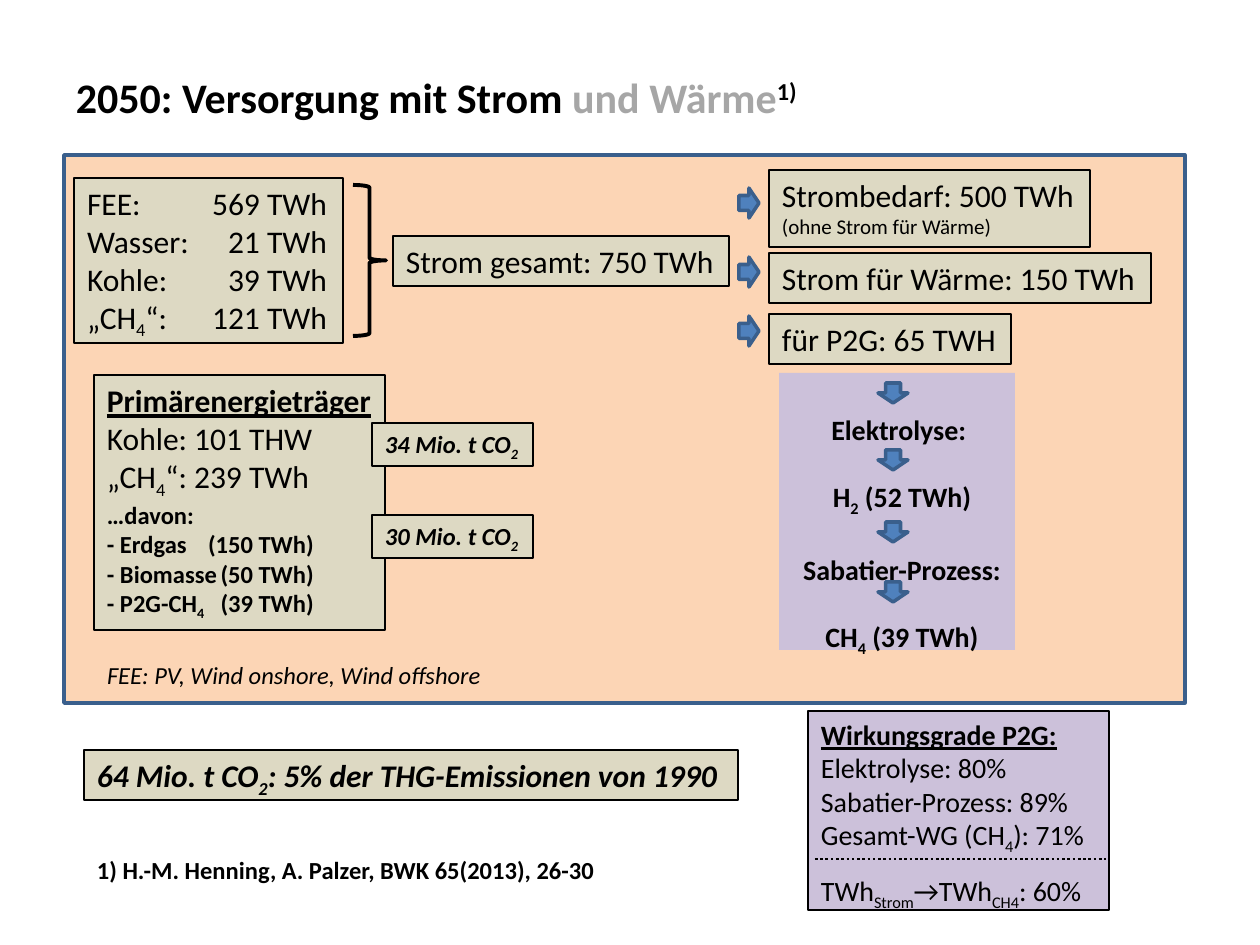
from pptx import Presentation
from pptx.dml.color import RGBColor
from pptx.enum.dml import MSO_LINE as Dash
from pptx.enum.shapes import MSO_CONNECTOR as Link, MSO_SHAPE as Kind
from pptx.enum.text import MSO_ANCHOR as Anchor, PP_ALIGN as Align
from pptx.oxml.ns import qn
from pptx.util import Pt
from lxml.etree import SubElement

SCALE = 914400 / 126
BLACK, GREY, SAND, PEACH = "000000", "A6A6A6", "DDD9C3", "FCD5B5"
LILAC, BLUE, NAVY = "CCC1DA", "4F81BD", "3A5F8C"
BOLD = {"bold": True}
HEAD = {"bold": True, "underline": True}
SLANT = {"bold": True, "italic": True}


def emu(px):
    return round(px * SCALE)


def rgb(code):
    return RGBColor.from_string(code)


class Deck:
    font = "Calibri"
    pad = 13

    def __init__(self, wide, high):
        self.prs = Presentation()
        self.prs.slide_width, self.prs.slide_height = emu(wide), emu(high)
        self.slide = self.prs.slides.add_slide(self.prs.slide_layouts[6])
        self.items = self.slide.shapes

    def shape(self, kind, box, fill=None, line=None, width=0.75):
        item = self.items.add_shape(kind, *map(emu, box))
        item.shadow.inherit = False
        if fill:
            item.fill.solid()
            item.fill.fore_color.rgb = rgb(fill)
        else:
            item.fill.background()
        if line:
            item.line.color.rgb = rgb(line)
            item.line.width = Pt(width)
        else:
            item.line.fill.background()
        return item

    def piece(self, par, text, size, color=BLACK, base=0, **form):
        """Add one run; base is its baseline shift in percent."""
        run = par.add_run()
        run.text = text
        for name, value in {"name": self.font, "size": Pt(size), **form}.items():
            setattr(run.font, name, value)
        run.font.color.rgb = rgb(color)
        if base:
            run._r.get_or_add_rPr().set("baseline", str(base * 1000))

    def put(self, item, lines, size, tab=0, align=Align.LEFT, **form):
        """Fill item with lines; a line is text or (text, format), with _subscripts_."""
        frame = item.text_frame
        side = 0 if align == Align.CENTER else self.pad
        look = {"word_wrap": True, "vertical_anchor": Anchor.TOP,
                "margin_left": emu(side), "margin_right": 0}
        for name, value in look.items():
            setattr(frame, name, value)
        for n, line in enumerate(lines):
            text, extra = (line, {}) if isinstance(line, str) else line
            style = {"size": size, **form, **extra}
            gap = style.pop("gap", 0)
            par = frame.add_paragraph() if n else frame.paragraphs[0]
            if tab and "\t" in text:
                stops = SubElement(par._p.get_or_add_pPr(), qn("a:tabLst"))
                SubElement(stops, qn("a:tab"), pos=str(emu(tab)), algn="r")
            par.alignment = align
            if gap:
                par.space_before = Pt(gap)
            for k, part in enumerate(text.split("_")):
                if part:
                    self.piece(par, part, base=-25 if k % 2 else 0, **style)

    def card(self, box, lines, size=18, fill=SAND, **form):
        self.put(self.shape(Kind.RECTANGLE, box, fill, BLACK), lines, size, **form)

    def label(self, box, lines, size, **form):
        item = self.items.add_textbox(*map(emu, box))
        self.put(item, lines, size, **form)
        return item

    def arrow(self, x, y, turn=0):
        item = self.shape(Kind.RIGHT_ARROW, (x, y, 20, 30), BLUE, NAVY, 2)
        item.rotation = turn

    def dots(self, left, right, y):
        line = self.items.add_connector(Link.STRAIGHT, *map(emu, (left, y, right, y)))
        line.line.color.rgb = rgb(BLACK)
        line.line.width = Pt(1.5)
        line.line.dash_style = Dash.ROUND_DOT
        SubElement(line._element.spPr, qn("a:effectLst"))

    def group(self):
        """Send the items that follow to a new group."""
        self.items = self.slide.shapes.add_group_shape().shapes

    def free(self):
        """Send the items that follow to the slide itself."""
        self.items = self.slide.shapes


def main():
    deck = Deck(1260, 945)
    deck.shape(Kind.RECTANGLE, (64, 155, 1121, 548), PEACH, NAVY, 2)

    title = deck.label((63, 38, 1134, 117), ["2050: Versorgung mit Strom "], 24, **BOLD)
    title.text_frame.vertical_anchor = Anchor.MIDDLE
    par = title.text_frame.paragraphs[0]
    deck.piece(par, "und Wärme", 24, GREY, **BOLD)
    deck.piece(par, "1)", 24, base=30, **BOLD)
    deck.label((84, 849, 528, 43),
               ["1) H.-M. Henning, A. Palzer, BWK 65(2013), 26-30"], 14, **BOLD)

    # Power supply and demand
    deck.card((74, 178, 269, 165), [
        "FEE:\t569 TWh", "Wasser:\t21 TWh", "Kohle:\t39 TWh", "„CH_4_“:\t121 TWh"],
        tab=240)
    deck.card((393, 236, 336, 50), ["Strom gesamt: 750 TWh"])
    deck.card((769, 314, 242, 50), ["für P2G: 65 TWH"])
    deck.card((769, 170, 321, 77), [
        "Strombedarf: 500 TWh", ("(ohne Strom für Wärme)", {"size": 12})])
    deck.card((769, 253, 382, 50), ["Strom für Wärme: 150 TWh"])

    # Primary energy and emissions
    small = {"size": 14, **BOLD}
    deck.card((94, 375, 291, 255), [
        ("Primärenergieträger", HEAD), "Kohle: 101 THW", "„CH_4_“: 239 TWh",
        ("…davon:", small), ("- Erdgas\t(150 TWh)", small),
        ("- Biomasse\t(50 TWh)", small), ("- P2G-CH_4_\t(39 TWh)", small)], tab=207)
    for y, tons in ((423, 34), (515, 30)):
        deck.card((372, y, 161, 43), [f"{tons} Mio. t CO_2_"], 14, **SLANT)
    deck.label((94, 654, 407, 43), ["FEE: PV, Wind onshore, Wind offshore"], 14,
               italic=True)
    deck.shape(Kind.RIGHT_BRACE, (353, 185, 33, 151), line=BLACK, width=2.25)
    for y in (188, 257, 316):
        deck.arrow(739, y)
    deck.card((84, 750, 654, 50),
              ["64 Mio. t CO_2_: 5% der THG-Emissionen von 1990"], **SLANT)

    # Power to gas steps
    deck.group()
    deck.shape(Kind.RECTANGLE, (779, 373, 236, 277), LILAC)
    skip = {"gap": 19.5}
    deck.label((789, 406, 226, 251), [
        "Elektrolyse: ", ("H_2_ (52 TWh)", skip), ("Sabatier-Prozess:", skip),
        ("CH_4_ (39 TWh)", skip)], 16, align=Align.CENTER, **BOLD)
    for y in (378, 445, 517, 577):
        deck.arrow(883, y, 90)
    deck.free()

    deck.card((808, 711, 301, 199), [
        ("Wirkungsgrade P2G:", HEAD), "Elektrolyse: 80%", "Sabatier-Prozess: 89%",
        "Gesamt-WG (CH_4_): 71%", ("TWh_Strom_→TWh_CH4_: 60%", {"gap": 10})],
        16, LILAC)
    deck.dots(815, 1106, 859)
    deck.prs.save("out.pptx")


if __name__ == "__main__":
    main()
